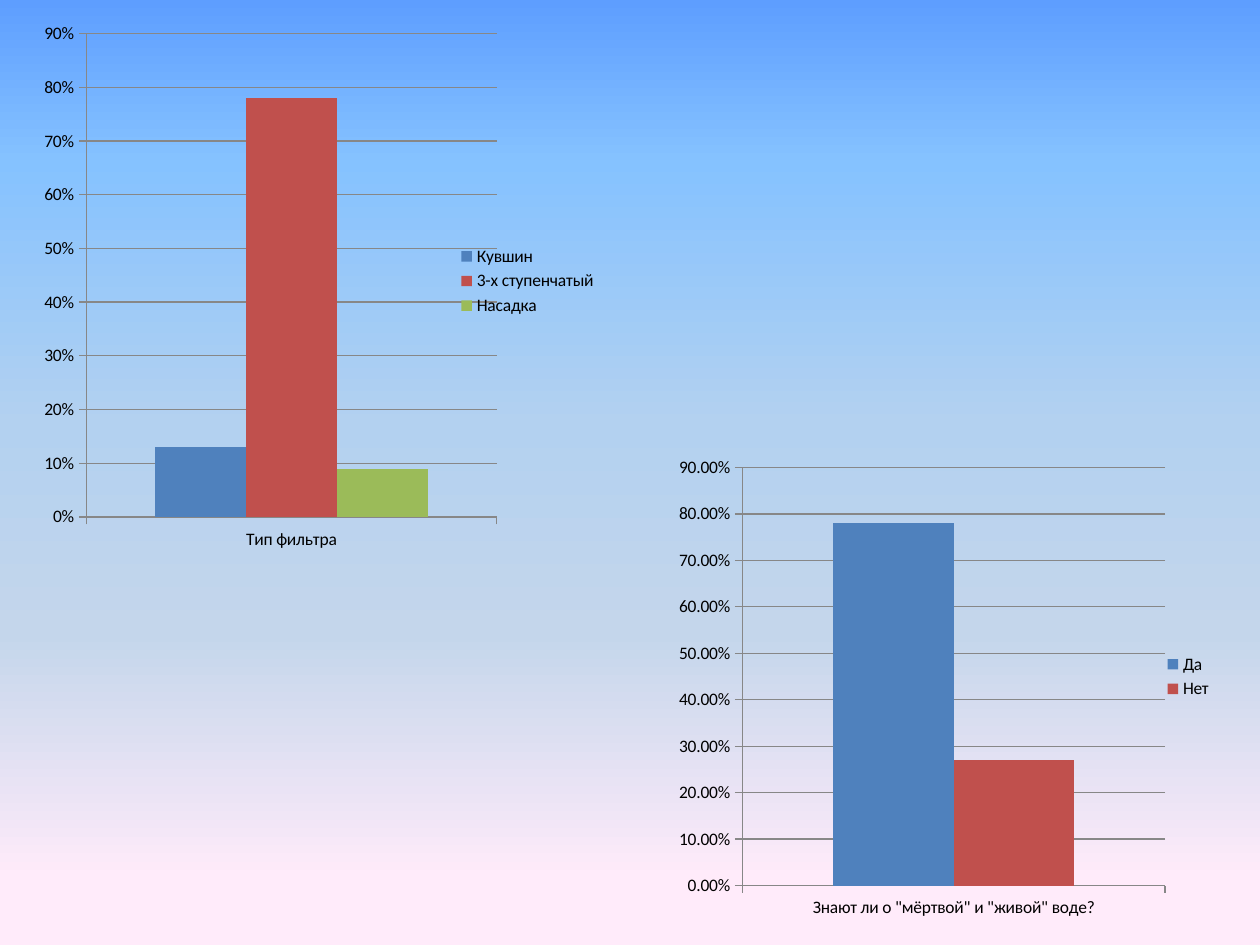
from lxml.etree import SubElement
from pptx import Presentation
from pptx.chart.data import CategoryChartData
from pptx.dml.color import RGBColor
from pptx.enum.chart import XL_CHART_TYPE, XL_LEGEND_POSITION, XL_TICK_MARK
from pptx.oxml import parse_xml
from pptx.oxml.ns import nsdecls, qn
from pptx.util import Cm, Pt

SKY = [(0, "5E9EFF"), (17, "85C2FF"), (45, "B3D1F0"), (67, "C4D6EB"), (93, "FFEBFA")]
SERIES_COLORS = ["4F81BD", "C0504D", "9BBB59"]
AXIS_COLOR = "878787"


def rgb(value):
    return RGBColor.from_string(value)


def paint_background(s, stops):
    fill = s.background.fill
    fill.gradient()
    fill.gradient_angle = 270
    stop_list = s.element.find(".//" + qn("a:gsLst"))
    for stop in list(stop_list):
        stop_list.remove(stop)
    for position, color in stops:
        stop = SubElement(stop_list, qn("a:gs"), pos=str(position * 1000))
        SubElement(stop, qn("a:srgbClr"), val=color)


def format_line(line, color=AXIS_COLOR):
    line.color.rgb = rgb(color)
    line.width = Pt(0.75)


def set_plot_layout(chart, x, y, w, h):
    plot_area = chart.element.find(".//" + qn("c:plotArea"))
    for layout in plot_area.findall(qn("c:layout")):
        plot_area.remove(layout)
    settings = [("layoutTarget", "inner"), ("xMode", "edge"), ("yMode", "edge"),
                ("x", x), ("y", y), ("w", w), ("h", h)]
    children = "".join(f'<c:{tag} val="{value}"/>' for tag, value in settings)
    plot_area.insert(0, parse_xml(
        f'<c:layout {nsdecls("c")}><c:manualLayout>{children}</c:manualLayout></c:layout>'))


def add_survey_chart(s, box, question, answers, number_format, plot_box):
    data = CategoryChartData(number_format=number_format)
    data.categories = [question]
    for name, share in answers.items():
        data.add_series(name, [share])
    chart = s.shapes.add_chart(XL_CHART_TYPE.COLUMN_CLUSTERED,
                               *[Cm(length) for length in box], data).chart
    chart.has_title = False
    chart.font.name = "Calibri"
    chart.font.size = Pt(10)
    chart.font.color.rgb = rgb("000000")

    plot = chart.plots[0]
    plot.gap_width = 150
    plot.vary_by_categories = False
    for series, color in zip(plot.series, SERIES_COLORS):
        series.format.fill.solid()
        series.format.fill.fore_color.rgb = rgb(color)

    for axis in (chart.category_axis, chart.value_axis):
        axis.major_tick_mark = XL_TICK_MARK.OUTSIDE
        format_line(axis.format.line)
    values = chart.value_axis
    values.minimum_scale, values.maximum_scale, values.major_unit = 0, 0.9, 0.1
    values.tick_labels.number_format = number_format
    values.tick_labels.number_format_is_linked = False
    values.has_major_gridlines = True
    format_line(values.major_gridlines.format.line)

    chart.has_legend = True
    chart.legend.position = XL_LEGEND_POSITION.RIGHT
    chart.legend.include_in_layout = False
    set_plot_layout(chart, *plot_box)


def main():
    prs = Presentation()
    prs.slide_width, prs.slide_height = Cm(25.4), Cm(19.05)
    s = prs.slides.add_slide(prs.slide_layouts[6])
    paint_background(s, SKY)
    add_survey_chart(s, (0.3, 0, 11.99, 11.33), "Тип фильтра",
                     {"Кувшин": 0.13, "3-х ступенчатый": 0.78, "Насадка": 0.09},
                     "0%", (0.12, 0.06, 0.69, 0.86))
    add_survey_chart(s, (13.69, 8.74, 11, 9.8),
                     'Знают ли о "мёртвой" и "живой" воде?',
                     {"Да": 0.78, "Нет": 0.27},
                     "0.00%", (0.11, 0.07, 0.78, 0.86))
    prs.save("out.pptx")


if __name__ == "__main__":
    main()
